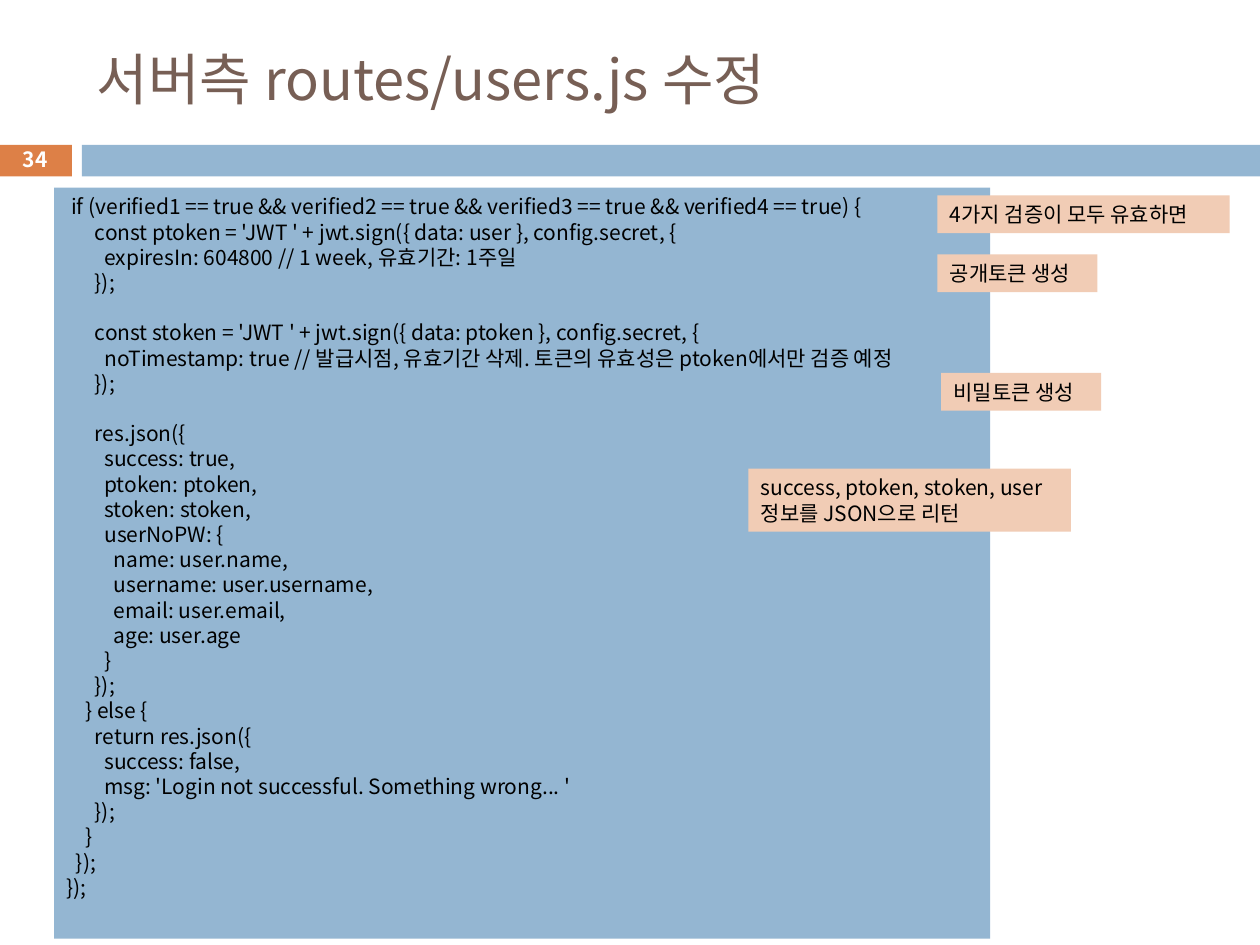
from pptx import Presentation, util as u
from pptx.dml.color import RGBColor
from pptx.enum import shapes, text
from pptx.oxml.ns import qn
from lxml import etree

THEME = {
    "font": "Noto Sans CJK KR",
    "blue": "94B6D2", "orange": "DD8047", "peach": "F1CCB5",
    "brown": "775F55", "black": "000000", "white": "FFFFFF",
    "title_size": 32, "body_size": 12, "line_pitch": 14.4,
}
INDENT_STEP = 0.0375  # inches per column of code indentation

TITLE = "서버측 routes/users.js 수정"
PAGE_NUMBER = "34"
BANDS = [((-0.01, 1.15, 0.58, 0.25), "orange"), ((0.65, 1.15, 9.35, 0.25), "blue")]

# Column of indentation, code; an empty string separates blocks
CODE = [
    (1, "if (verified1 == true && verified2 == true && verified3 == true && verified4 == true) {"),
    (6, "const ptoken = 'JWT ' + jwt.sign({ data: user }, config.secret, {"),
    (8, "expiresIn: 604800 // 1 week, 유효기간: 1주일"),
    (6, "});"),
    (0, ""),
    (6, "const stoken = 'JWT ' + jwt.sign({ data: ptoken }, config.secret, {"),
    (8, "noTimestamp: true // 발급시점, 유효기간 삭제. 토큰의 유효성은 ptoken에서만 검증 예정"),
    (6, "});"),
    (0, ""),
    (6, "res.json({"),
    (8, "success: true,"),
    (8, "ptoken: ptoken,"),
    (8, "stoken: stoken,"),
    (8, "userNoPW: {"),
    (10, "name: user.name,"),
    (10, "username: user.username,"),
    (10, "email: user.email,"),
    (10, "age: user.age"),
    (8, "}"),
    (6, "});"),
    (4, "} else {"),
    (6, "return res.json({"),
    (8, "success: false,"),
    (8, "msg: 'Login not successful. Something wrong... '"),
    (6, "});"),
    (4, "}"),
    (2, "});"),
    (0, "});"),
]
CALLOUTS = [
    ((7.44, 1.55, 2.32, 0.3), ["4가지 검증이 모두 유효하면"]),
    ((7.44, 2.02, 1.27, 0.3), ["공개토큰 생성"]),
    ((7.47, 2.96, 1.27, 0.3), ["비밀토큰 생성"]),
    ((5.94, 3.72, 2.56, 0.5), ["success, ptoken, stoken, user", "정보를 JSON으로 리턴"]),
]


def color(name):
    return RGBColor.from_string(THEME[name])


def add_panel(slide, box, fill):
    shape = slide.shapes.add_shape(shapes.MSO_SHAPE.RECTANGLE, *map(u.Inches, box))
    shape.shadow.inherit = False
    shape.fill.solid()
    shape.fill.fore_color.rgb = color(fill)
    shape.line.fill.background()
    return shape


def style(paragraph, size, ink, bold=False, align=text.PP_ALIGN.LEFT):
    """Set the theme font for both Latin and Korean letters."""
    paragraph.alignment = align
    font = paragraph.font
    font.name, font.size, font.bold = THEME["font"], u.Pt(size), bold
    font.color.rgb = color(ink)
    for run in paragraph.runs:
        run.font.name = THEME["font"]
        latin = run.font._element.find(qn("a:latin"))
        east_asian = etree.Element(qn("a:ea"), typeface=THEME["font"])
        latin.addnext(east_asian)


def write_lines(shape, lines):
    """Write (column, text) pairs; an empty text becomes space before the next line."""
    frame = shape.text_frame
    frame.word_wrap = True
    frame.vertical_anchor = text.MSO_ANCHOR.TOP
    paragraph, gap = frame.paragraphs[0], 0
    for index, (column, line) in enumerate(lines):
        if not line:
            gap = THEME["line_pitch"]
            continue
        if index:
            paragraph = frame.add_paragraph()
        paragraph.add_run().text = line
        style(paragraph, THEME["body_size"], "black")
        paragraph.line_spacing = u.Pt(THEME["line_pitch"])
        paragraph.space_before = u.Pt(gap)
        properties = paragraph._p.get_or_add_pPr()
        properties.set("marL", str(u.Inches(column * INDENT_STEP)))
        properties.set("indent", "0")
        gap = 0


def add_label(slide, box, words, size, ink, **look):
    label = slide.shapes.add_textbox(*map(u.Inches, box))
    frame = label.text_frame
    frame.word_wrap = True
    frame.vertical_anchor = text.MSO_ANCHOR.MIDDLE
    paragraph = frame.paragraphs[0]
    paragraph.add_run().text = words
    style(paragraph, size, ink, **look)


def main():
    presentation = Presentation()
    presentation.slide_width, presentation.slide_height = u.Inches(10), u.Inches(7.5)
    slide = presentation.slides.add_slide(presentation.slide_layouts[6])

    for box, fill in BANDS:
        add_panel(slide, box, fill)
    write_lines(add_panel(slide, (0.43, 1.49, 7.43, 5.96), "blue"), CODE)
    add_label(slide, (0.67, 0.25, 8.92, 0.74), TITLE, THEME["title_size"], "brown")
    add_label(slide, (-0.01, 1.13, 0.58, 0.27), PAGE_NUMBER, THEME["body_size"], "white",
              bold=True, align=text.PP_ALIGN.CENTER)
    for box, lines in CALLOUTS:
        write_lines(add_panel(slide, box, "peach"), [(0, line) for line in lines])

    presentation.save("out.pptx")


if __name__ == "__main__":
    main()
